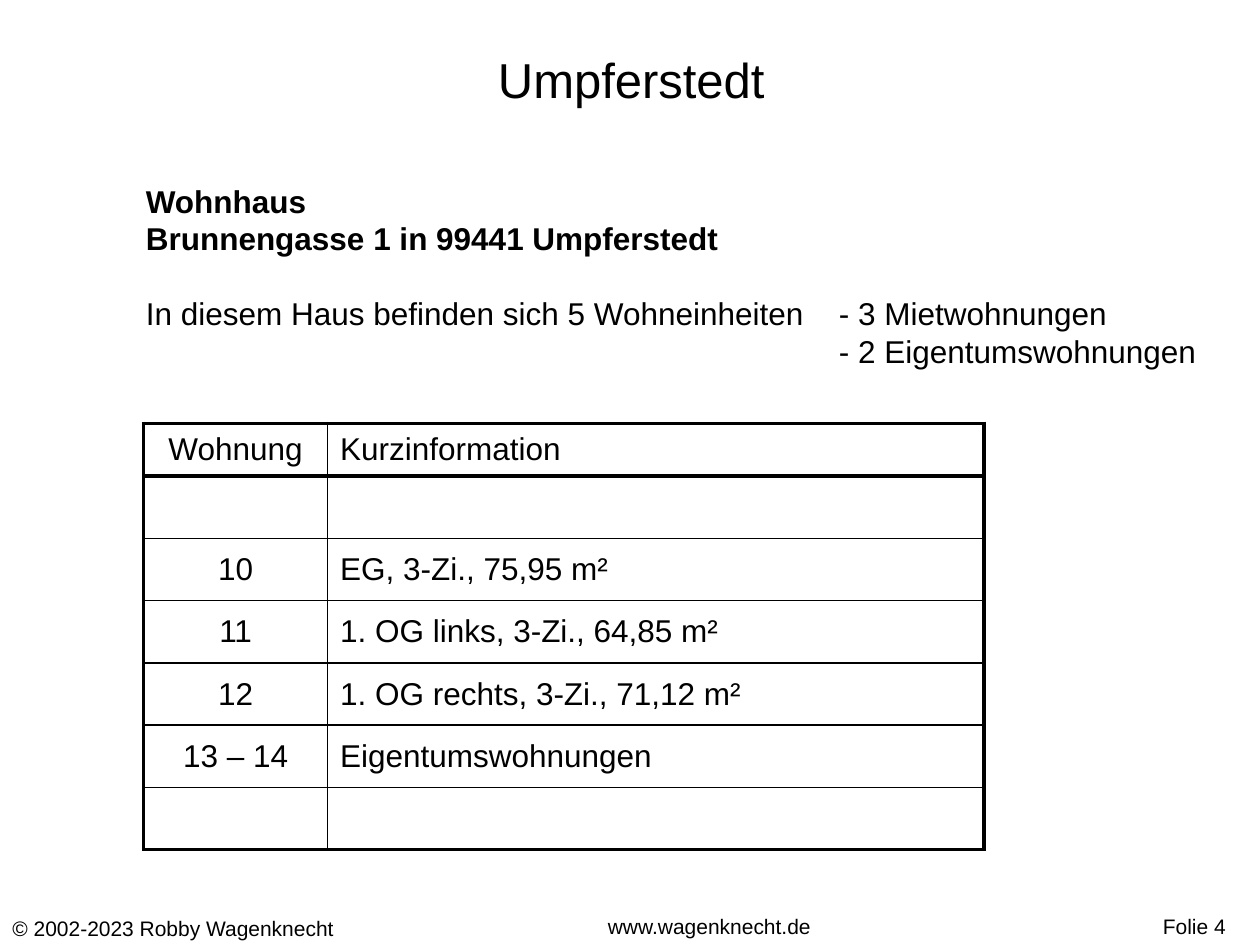
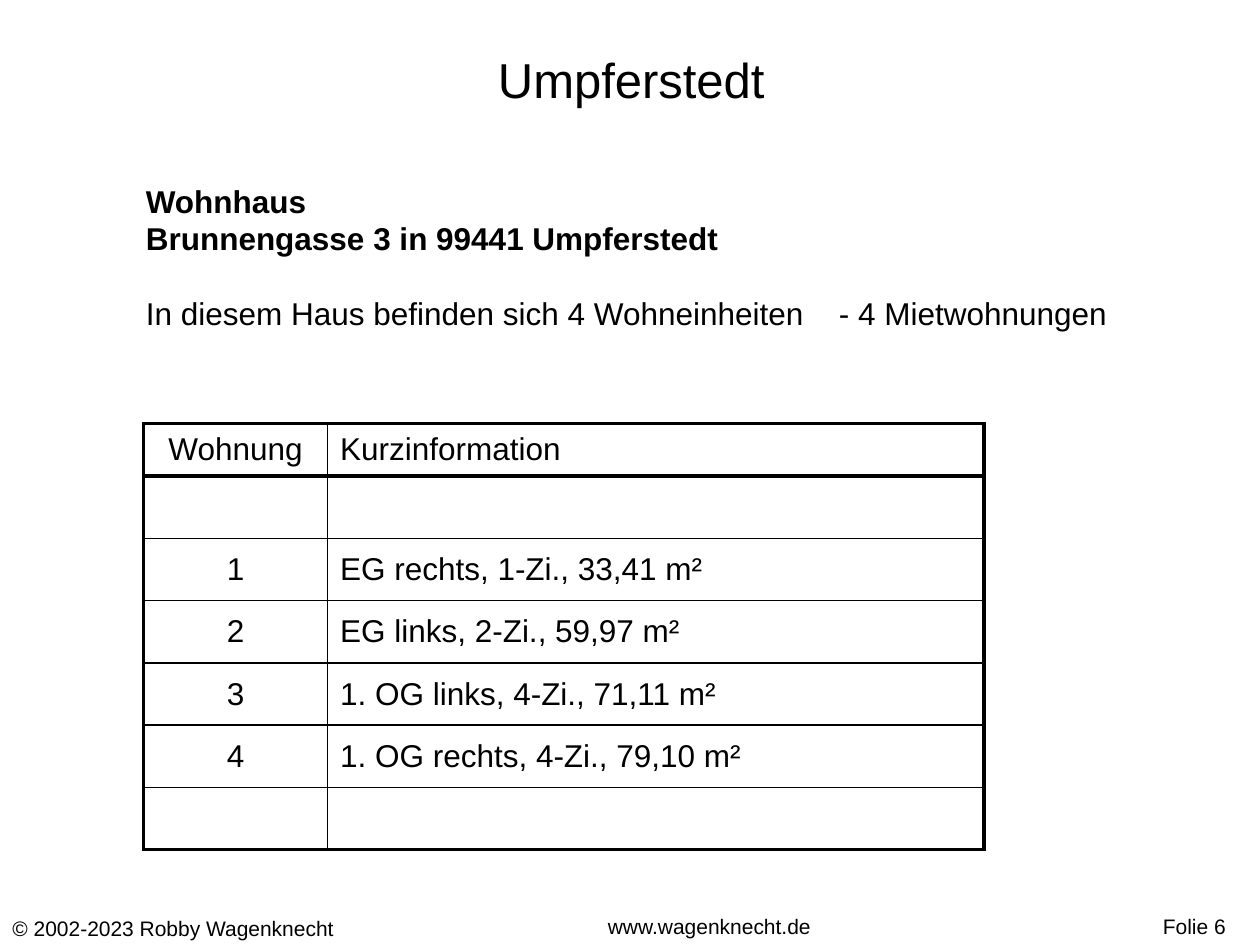
from dataclasses import dataclass

from pptx import Presentation
from pptx.dml.color import RGBColor
from pptx.enum import text as t
from pptx.oxml import parse_xml
from pptx.oxml.ns import nsdecls
from pptx.util import Pt


@dataclass(frozen=True)
class Theme:
    font: str = "Arial"
    ink: str = "000000"
    title_size: float = 28
    body_size: float = 18
    footer_size: float = 12
    line_pitch: float = 21.5
    thick: float = 2.25
    thin: float = 1


THEME = Theme()
LEFT, CENTER = t.PP_ALIGN.LEFT, t.PP_ALIGN.CENTER

# Layout in points
TAB_STOP = 396
TABLE_LEFT, TABLE_TOP = 82.1, 241.9
COLUMN_WIDTHS = (105.1, 375.1)
HEADER_HEIGHT, ROW_HEIGHT = 30.2, 35.6

# Content of each page
HOUSES = [
    dict(number=4, address="Brunnengasse 1 in 99441 Umpferstedt", units=5,
         kinds=["- 3 Mietwohnungen", "- 2 Eigentumswohnungen"],
         flats=[("10", "EG, 3-Zi., 75,95 m²"),
                ("11", "1. OG links, 3-Zi., 64,85 m²"),
                ("12", "1. OG rechts, 3-Zi., 71,12 m²"),
                ("13 – 14", "Eigentumswohnungen")]),
    dict(number=6, address="Brunnengasse 3 in 99441 Umpferstedt", units=4,
         kinds=["- 4 Mietwohnungen"],
         flats=[("1", "EG rechts, 1-Zi., 33,41 m²"),
                ("2", "EG links, 2-Zi., 59,97 m²"),
                ("3", "1. OG links, 4-Zi., 71,11 m²"),
                ("4", "1. OG rechts, 4-Zi., 79,10 m²")]),
]


def apply(target, values):
    for name, value in values.items():
        setattr(target, name, value)


def write(para, words, size, align=LEFT, bold=False):
    para.alignment = align
    span = para.add_run()
    span.text = words
    apply(span.font, dict(name=THEME.font, size=Pt(size), bold=bold))
    span.font.color.rgb = RGBColor.from_string(THEME.ink)


def add_box(page, left, top, width, height, anchor=t.MSO_ANCHOR.TOP):
    box = page.shapes.add_textbox(Pt(left), Pt(top), Pt(width), Pt(height))
    apply(box.text_frame, dict(word_wrap=True, vertical_anchor=anchor))
    return box.text_frame


def add_label(page, words, frame, size, align=LEFT, anchor=t.MSO_ANCHOR.TOP):
    write(add_box(page, *frame, anchor).paragraphs[0], words, size, align)


def add_tab_stop(para, position):
    para._p.get_or_add_pPr().append(parse_xml(
        f'<a:tabLst {nsdecls("a")}><a:tab pos="{Pt(position)}" algn="l"/></a:tabLst>'))


# Title and footer shared by all pages
def add_frame(page, number):
    add_label(page, "Umpferstedt", (36.7, 0, 648, 90), THEME.title_size,
              CENTER, t.MSO_ANCHOR.MIDDLE)
    size = THEME.footer_size
    add_label(page, "© 2002-2023 Robby Wagenknecht", (0, 519.8, 275, 21.6), size)
    add_label(page, "www.wagenknecht.de", (178.6, 518.4, 453.6, 21.6), size, CENTER)
    add_label(page, f"Folie {number}", (657.4, 518.4, 62.6, 21.6), size)


# House name, address and number of units
def add_summary(page, house):
    first, *others = house["kinds"]
    intro = f"In diesem Haus befinden sich {house['units']} Wohneinheiten"
    headings = ["Wohnhaus", house["address"]]
    lines = headings + [f"{intro}\t{first}"] + [f"\t{kind}" for kind in others]
    height = THEME.line_pitch * (len(lines) + 1) + 7.2
    frame = add_box(page, 76.3, 100.4, 643.7, height)
    for index, words in enumerate(lines):
        para = frame.paragraphs[0] if index == 0 else frame.add_paragraph()
        para.line_spacing = Pt(THEME.line_pitch)
        if index == len(headings):
            para.space_before = Pt(THEME.line_pitch)
        if index >= len(headings):
            add_tab_stop(para, TAB_STOP)
        write(para, words, THEME.body_size, bold=index < len(headings))


def set_borders(cell, widths):
    properties = cell._tc.get_or_add_tcPr()
    for side, width in widths.items():
        properties.append(parse_xml(
            f'<a:ln{side} {nsdecls("a")} w="{Pt(width)}"><a:solidFill>'
            f'<a:srgbClr val="{THEME.ink}"/></a:solidFill></a:ln{side}>'))
    cell.fill.background()


# Flats, with an empty row above and below them
def add_flat_table(page, flats):
    rows = [("Wohnung", "Kurzinformation"), ("", ""), *flats, ("", "")]
    heights = [HEADER_HEIGHT] + [ROW_HEIGHT] * (len(rows) - 1)
    table = page.shapes.add_table(
        len(rows), len(COLUMN_WIDTHS), Pt(TABLE_LEFT), Pt(TABLE_TOP),
        Pt(sum(COLUMN_WIDTHS)), Pt(sum(heights))).table
    apply(table, dict(first_row=False, horz_banding=False))
    for column, width in zip(table.columns, COLUMN_WIDTHS):
        column.width = Pt(width)
    for row, height in zip(table.rows, heights):
        row.height = Pt(height)

    def weight(is_thick):
        return THEME.thick if is_thick else THEME.thin

    last_row, last_column = len(rows) - 1, len(COLUMN_WIDTHS) - 1
    for r, row in enumerate(rows):
        for c, words in enumerate(row):
            cell = table.cell(r, c)
            cell.vertical_anchor = t.MSO_ANCHOR.MIDDLE
            set_borders(cell, dict(L=weight(c == 0), R=weight(c == last_column),
                                   T=weight(r <= 1), B=weight(r in (0, last_row))))
            if words:
                write(cell.text_frame.paragraphs[0], words, THEME.body_size,
                      CENTER if c == 0 else LEFT)


def main():
    deck = Presentation()
    apply(deck, dict(slide_width=Pt(720), slide_height=Pt(540)))
    for house in HOUSES:
        page = deck.slides.add_slide(deck.slide_layouts[6])
        add_frame(page, house["number"])
        add_summary(page, house)
        add_flat_table(page, house["flats"])
    deck.save("out.pptx")


if __name__ == "__main__":
    main()
